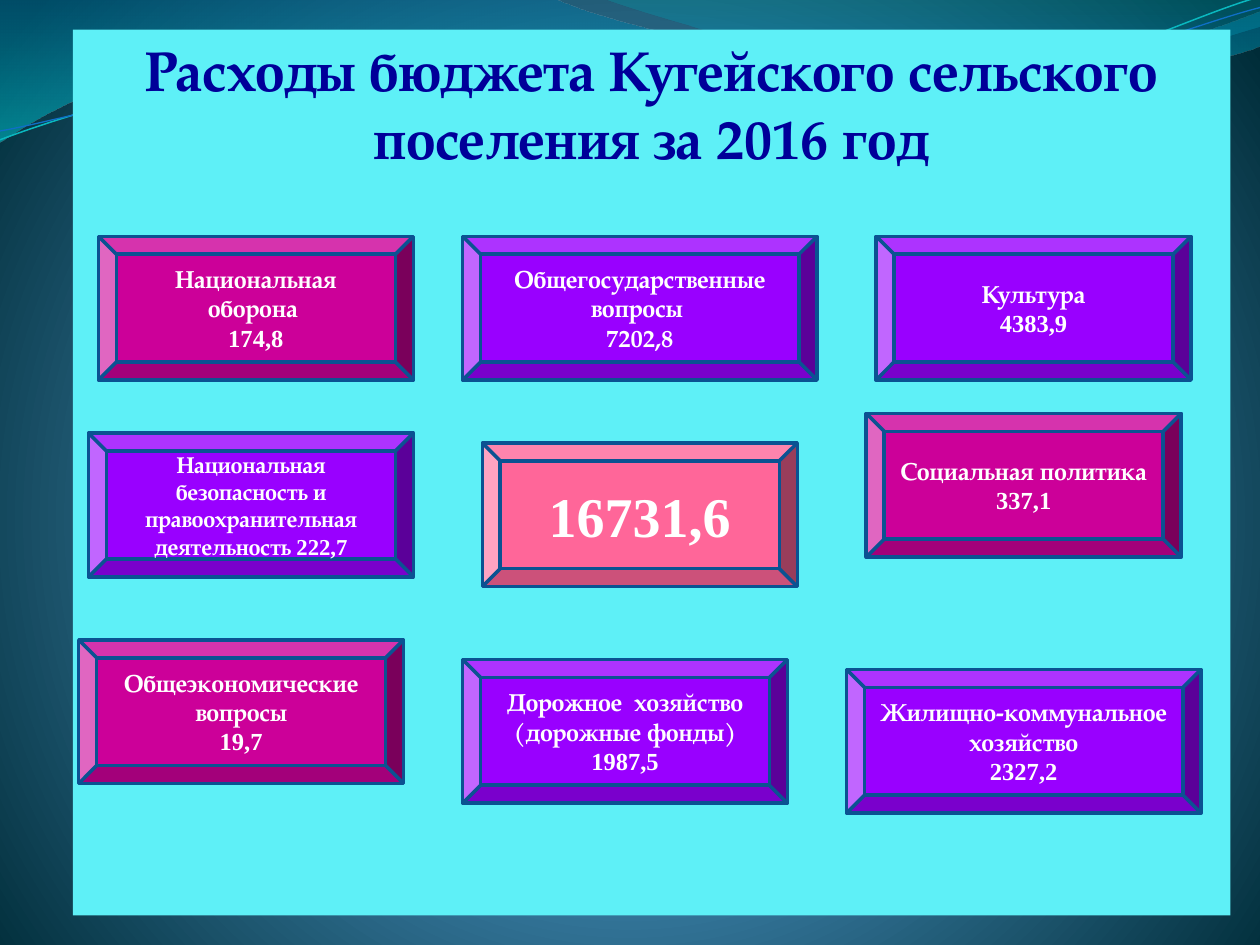
from typing import NamedTuple

import lxml.etree
import pptx
import pptx.dml.color
import pptx.enum.shapes
import pptx.enum.text
import pptx.oxml.ns
import pptx.util

RGBColor = pptx.dml.color.RGBColor
MSO_ANCHOR = pptx.enum.text.MSO_ANCHOR
qn = pptx.oxml.ns.qn

WHITE = RGBColor(0xFF, 0xFF, 0xFF)
NAVY = RGBColor(0x00, 0x00, 0x99)
AQUA = RGBColor(0x5E, 0xF0, 0xF7)
EDGE = RGBColor(0x0B, 0x52, 0x92)
MAGENTA = RGBColor(0xCC, 0x00, 0x99)
VIOLET = RGBColor(0x99, 0x00, 0xFF)
PINK = RGBColor(0xFF, 0x66, 0x99)
TEAL = RGBColor(0x0A, 0xB8, 0xBF)
BLUE = RGBColor(0x0F, 0x6F, 0xC6)
SKY = RGBColor(0x4A, 0xA0, 0xD6)
STEEL = RGBColor(0x4C, 0x98, 0xC7)
DEEP = RGBColor(0x00, 0x2C, 0x38)
WAVE_BLUE = RGBColor(0x00, 0x74, 0xA1)
WAVE_AQUA = RGBColor(0x00, 0xC6, 0xCF)
CREST_TEAL = RGBColor(0x00, 0xA1, 0xA9)
CREST_BLUE = RGBColor(0x00, 0x8B, 0xBF)

SERIF = "TeX Gyre Pagella"
DIGITS = "Times New Roman"
COLUMNS, ROWS = 128, 96
BOX_ROWS = 14.6


class Stop(NamedTuple):
    position: int
    color: RGBColor
    alpha: int = 100


class Wave(NamedTuple):
    start: tuple
    segments: list
    stops: tuple = ()
    color: RGBColor = None
    width: float = 0


class Box(NamedTuple):
    column: float
    row: float
    columns: float
    color: RGBColor
    label: str
    value: str
    size: float = 14
    value_font: str = DIGITS
    one_paragraph: bool = False


WAVES = [
    Wave((-0.01, -0.01), [
        (4.4, -0.01), (4.76, 0.17, 6.64, 0.63, 7.58, 0.63),
        (8.53, 0.63, 9.58, 0.26, 10, 0.09), (10.01, 0.36),
        (9.83, 0.44, 8.7, 0.76, 7.46, 0.75), (6.22, 0.75, 3.82, 0.28, 2.57, 0.34),
        (1.29, 0.36, 0.46, 0.83, -0.01, 1.13),
    ], (Stop(0, WAVE_BLUE, 45), Stop(100, WAVE_AQUA, 55))),
    Wave((4.79, -0.01), [
        (5.09, 0.11, 6.82, 0.62, 7.69, 0.65), (8.56, 0.69, 9.61, 0.32, 10, 0.21), (10, 0),
    ], (Stop(0, CREST_TEAL, 30), Stop(80, CREST_BLUE, 45))),
    Wave((0, 1.11), [
        (0.48, 0.93, 1.58, 0.57, 2.77, 0.52), (3.95, 0.47, 5.93, 0.89, 7.13, 0.8),
        (8.33, 0.71, 9.38, 0.15, 9.98, -0.02),
    ], color=TEAL, width=0.85),
    Wave((0, 1.04), [
        (0.47, 0.96, 1.64, 0.61, 2.83, 0.56), (4.03, 0.51, 5.97, 0.84, 7.17, 0.75),
        (8.36, 0.67, 9.41, 0.21, 10, 0.06),
    ], color=BLUE, width=0.75),
]

BOXES = [
    Box(10, 24, 32, MAGENTA, "Национальная оборона ", "174,8"),
    Box(9, 44, 33, VIOLET,
        "Национальная безопасность и правоохранительная деятельность ", "222,7",
        size=13, one_paragraph=True),
    Box(8, 65, 33, MAGENTA, "Общеэкономические вопросы", "19,7"),
    Box(47, 67, 33, VIOLET, "Дорожное  хозяйство (дорожные фонды)", "1987,5"),
    Box(86, 68, 36, VIOLET, "Жилищно-коммунальное хозяйство", "2327,2"),
    Box(49, 45, 32, PINK, "", "16731,6", size=32, one_paragraph=True),
    Box(47, 24, 36, VIOLET, "Общегосударственные вопросы ", "7202,8", value_font=SERIF),
    Box(88, 42, 32, MAGENTA, "Социальная политика", "337,1"),
    Box(89, 24, 32, VIOLET, "Культура", "4383,9"),
]

prs = pptx.Presentation()
prs.slide_width = pptx.util.Inches(10)
prs.slide_height = pptx.util.Inches(7.5)


def grid(column: float, row: float, columns: float, rows: float) -> list:
    across, down = prs.slide_width / COLUMNS, prs.slide_height / ROWS
    return [round(n) for n in (column * across, row * down, columns * across, rows * down)]


def add_text(p, text: str, *, font: str, size: float, color: RGBColor) -> None:
    p.alignment = pptx.enum.text.PP_ALIGN.CENTER
    r = p.add_run()
    r.text = text
    r.font.name, r.font.size, r.font.bold = font, pptx.util.Pt(size), True
    r.font.color.rgb = color


def set_frame(tf, anchor, side: float) -> None:
    tf.word_wrap = True
    tf.auto_size = pptx.enum.text.MSO_AUTO_SIZE.NONE
    tf.vertical_anchor = anchor
    tf.margin_left = tf.margin_right = pptx.util.Inches(side)
    tf.margin_top = tf.margin_bottom = pptx.util.Inches(0.05)


def set_gradient(fill, owner, stops: tuple, focus: dict = None) -> None:
    fill.gradient()
    gradient = next(owner.iter(qn("a:gradFill")))
    for child in list(gradient):
        gradient.remove(child)
    sub = lxml.etree.SubElement
    stop_list = sub(gradient, qn("a:gsLst"))
    for stop in stops:
        gs = sub(stop_list, qn("a:gs"), pos=str(stop.position * 1000))
        color = sub(gs, qn("a:srgbClr"), val=str(stop.color))
        if stop.alpha < 100:
            sub(color, qn("a:alpha"), val=str(stop.alpha * 1000))
    if focus:
        sub(sub(gradient, qn("a:path"), path="circle"), qn("a:fillToRect"), **focus)
    else:
        sub(gradient, qn("a:lin"), ang="5400000", scaled="1")


def bend(sp, segments: list) -> None:
    lines = iter(list(sp.element.iter(qn("a:lnTo"))))
    for segment in segments:
        first = next(lines)
        if len(segment) == 6:
            first.tag = qn("a:cubicBezTo")
            for line in (next(lines), next(lines)):
                first.append(line[0])
                line.getparent().remove(line)


def draw_wave(s, wave: Wave) -> None:
    inch = pptx.util.Inches
    points = [(inch(seg[i]), inch(seg[i + 1]))
              for seg in wave.segments for i in range(0, len(seg), 2)]
    builder = s.shapes.build_freeform(inch(wave.start[0]), inch(wave.start[1]))
    builder.add_line_segments(points, close=bool(wave.stops))
    sp = builder.convert_to_shape()
    bend(sp, wave.segments)
    sp.shadow.inherit = False
    if wave.stops:
        set_gradient(sp.fill, sp.element, wave.stops)
        sp.line.fill.background()
    else:
        sp.fill.background()
        sp.line.color.rgb, sp.line.width = wave.color, pptx.util.Pt(wave.width)


def draw_title(s, text: str) -> None:
    sp = s.shapes.title
    sp.element.getparent().append(sp.element)
    sp.left, sp.top, sp.width, sp.height = grid(7.4, 3, 117.6, 90)
    sp.fill.solid()
    sp.fill.fore_color.rgb = AQUA
    set_frame(sp.text_frame, MSO_ANCHOR.TOP, 0.05)
    p = sp.text_frame.paragraphs[0]
    p.space_before = pptx.util.Pt(6.4)
    add_text(p, text, font=SERIF, size=32, color=NAVY)


def draw_box(s, box: Box) -> None:
    sp = s.shapes.add_shape(pptx.enum.shapes.MSO_SHAPE.BEVEL,
                            *grid(box.column, box.row, box.columns, BOX_ROWS))
    sp.shadow.inherit = False
    sp.fill.solid()
    sp.fill.fore_color.rgb = box.color
    sp.line.color.rgb, sp.line.width = EDGE, pptx.util.Pt(2)
    tf = sp.text_frame
    set_frame(tf, MSO_ANCHOR.MIDDLE, 0.11)
    p = tf.paragraphs[0]
    if box.label:
        add_text(p, box.label, font=SERIF, size=box.size, color=WHITE)
    if not box.one_paragraph:
        p = tf.add_paragraph()
    add_text(p, box.value, font=box.value_font, size=box.size, color=WHITE)


def main() -> None:
    s = prs.slides.add_slide(prs.slide_layouts[5])
    set_gradient(s.background.fill, s.element,
                 (Stop(0, SKY), Stop(25, STEEL), Stop(100, DEEP)),
                 {"l": "10000", "t": "110000", "r": "10000", "b": "100000"})
    for wave in WAVES:
        draw_wave(s, wave)
    draw_title(s, "Расходы бюджета Кугейского сельского поселения за 2016 год")
    for box in BOXES:
        draw_box(s, box)
    prs.save("out.pptx")


if __name__ == "__main__":
    main()
